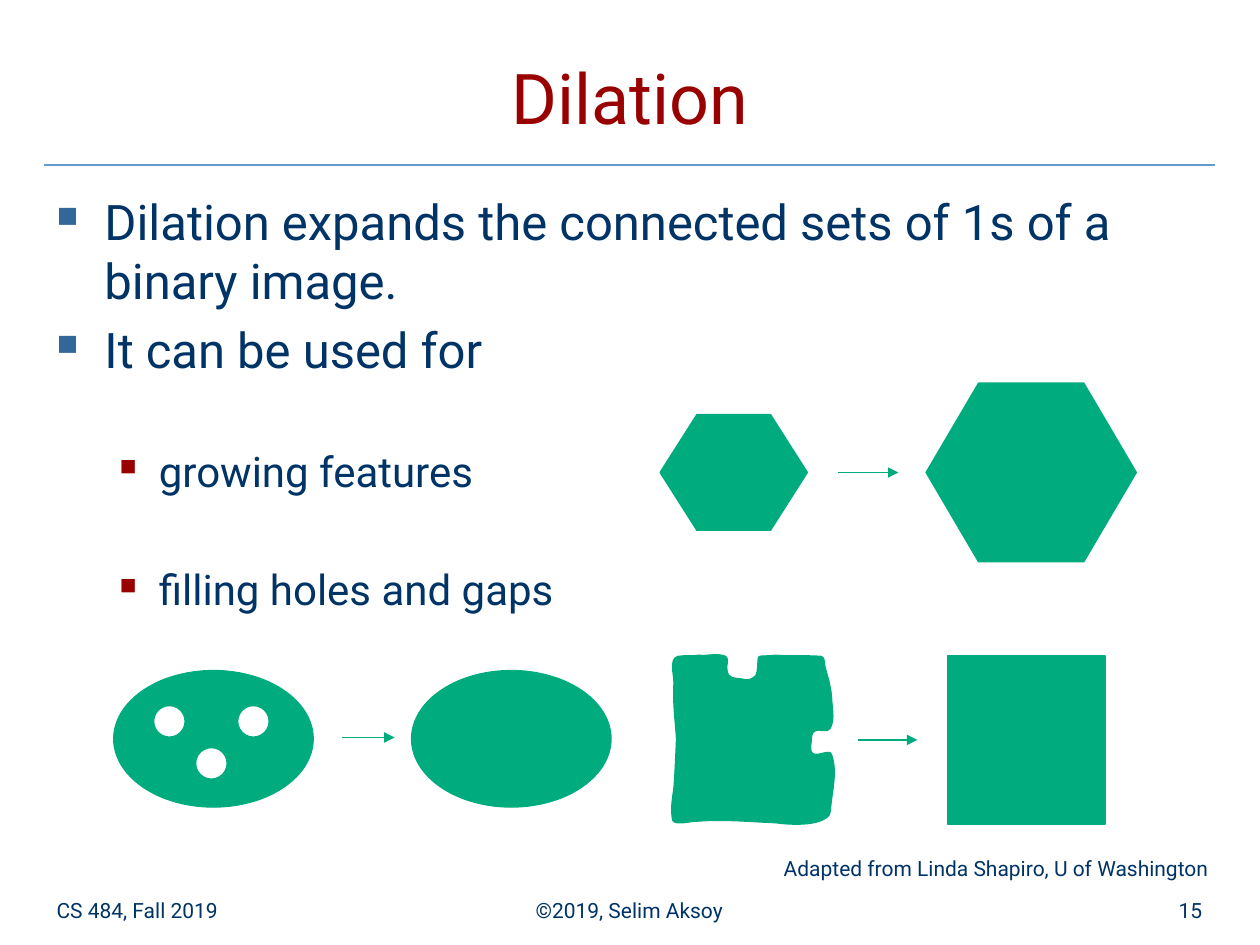
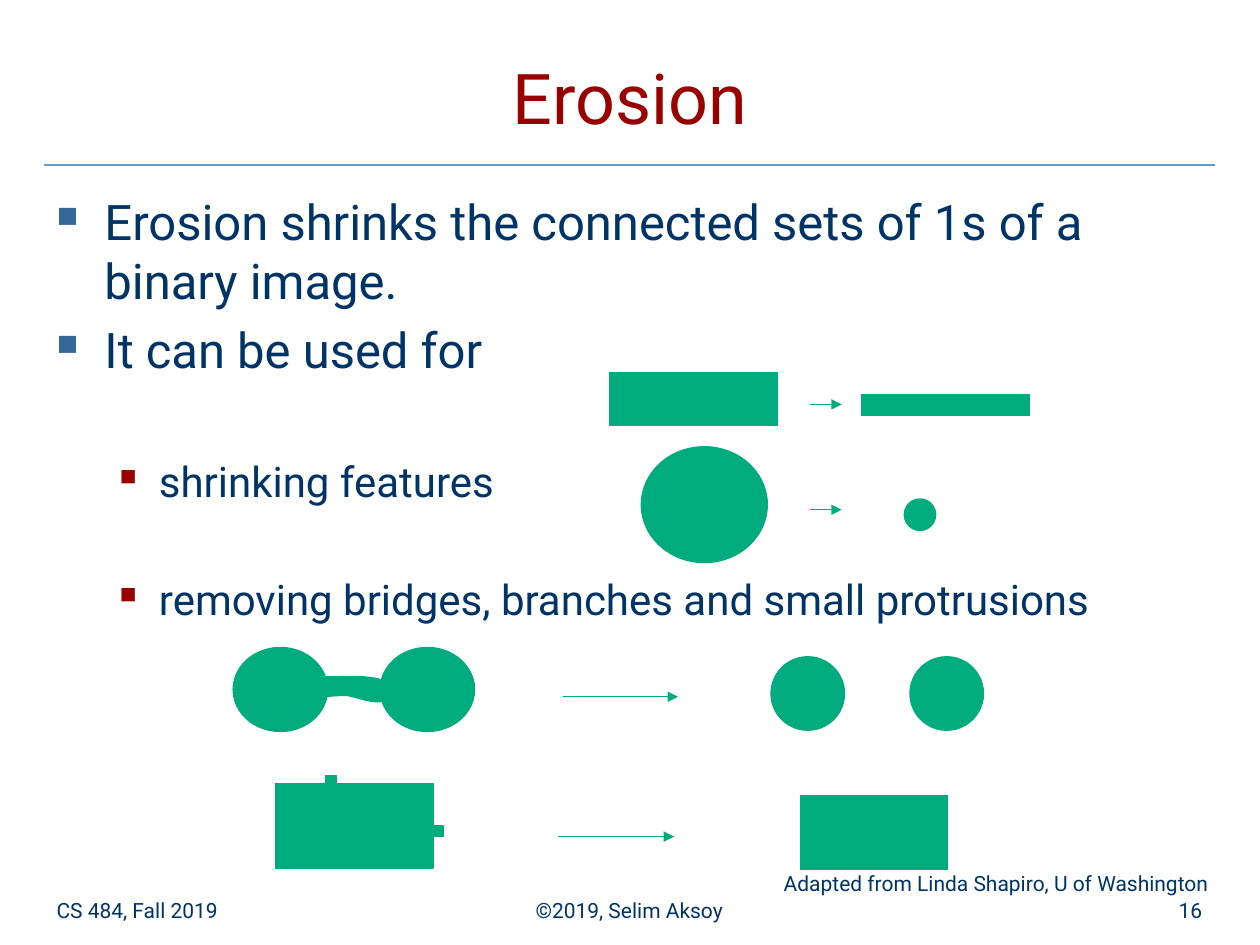
"""Builds two slides on morphological dilation and erosion."""
from lxml.etree import SubElement
from pptx import Presentation
from pptx.dml.color import RGBColor
from pptx.enum.shapes import MSO_CONNECTOR as Connector, MSO_SHAPE as Shape
from pptx.enum.text import MSO_ANCHOR as Anchor, PP_ALIGN as Align
from pptx.oxml.ns import qn
from pptx.util import Pt

color_of = RGBColor.from_string
FONT = "Roboto"
NAVY, RED, STEEL, SKY = "003366", "990000", "336699", "6699CC"
GREEN, WHITE = "00AB7E", "FFFFFF"
MARGIN, FULL = 25.2, 669
LINE_WIDTH = Pt(0.75)
CURVE_UNIT = Pt(0.72)
BULLETS = [
    {"size": 28, "indent": 27.4, "hang": 27.4, "color": STEEL, "percent": 60},
    {"size": 24, "indent": 58.5, "hang": 22.5, "color": RED, "percent": 55},
]


def write(frame, text, size=12, color=NAVY, align=Align.LEFT, before=0, level=None):
    """Add one formatted paragraph, bulleted when a level is given."""
    para = frame.add_paragraph() if frame.text else frame.paragraphs[0]
    para.alignment = align
    para.space_before = Pt(before)
    if level is not None:
        bullet = BULLETS[level]
        size = bullet["size"]
        para.level = level
        props = para._p.get_or_add_pPr()
        props.set("marL", str(Pt(bullet["indent"])))
        props.set("indent", str(-Pt(bullet["hang"])))
        tint = SubElement(props, qn("a:buClr"))
        SubElement(tint, qn("a:srgbClr"), val=bullet["color"])
        SubElement(props, qn("a:buSzPct"), val=str(bullet["percent"] * 1000))
        SubElement(props, qn("a:buFont"), typeface="Wingdings", pitchFamily="2", charset="2")
        SubElement(props, qn("a:buChar"), char="n")
    span = para.add_run()
    span.text = text
    span.font.name = FONT
    span.font.size = Pt(size)
    span.font.color.rgb = color_of(color)


def paint(shape, fill=GREEN):
    """Fill a figure and give it the green outline."""
    shape.shadow.inherit = False
    shape.fill.solid()
    shape.fill.fore_color.rgb = color_of(fill)
    shape.line.color.rgb = color_of(GREEN)
    shape.line.width = LINE_WIDTH


ragged_square = [
    (555, 520), (561, 521), (569, 518), (576, 521), (579, 523), (576, 528), (577, 532),
    (578, 539), (583, 538), (589, 539), (594, 540), (596, 540), (600, 536),
    (600, 535), (601, 534), (601, 533), (603, 517), (598, 522), (616, 520),
    (628, 521), (640, 520), (652, 521), (655, 522), (654, 527), (655, 530),
    (656, 535), (656, 535), (658, 541), (659, 545), (660, 552), (660, 552),
    (660, 561), (663, 570), (659, 578), (657, 582), (650, 578), (647, 580),
    (644, 581), (644, 586), (644, 586), (644, 590), (642, 596), (645, 598),
    (649, 601), (659, 594), (660, 599), (665, 613), (660, 629), (659, 644),
    (659, 645), (659, 646), (658, 647), (649, 658), (616, 653), (616, 653),
    (593, 652), (573, 650), (550, 652), (548, 652), (535, 655), (534, 651),
    (532, 642), (534, 633), (535, 625), (536, 612), (537, 586), (537, 586),
    (536, 572), (534, 557), (535, 542), (535, 535), (531, 523), (538, 521),
    (544, 520), (549, 521), (555, 520),
]
bridge = [
    (249, 537), (266, 538), (284, 535), (301, 539), (303, 539), (303, 546), (303, 546),
    (303, 549), (305, 553), (304, 556), (304, 557), (302, 557), (301, 557),
    (292, 557), (285, 554), (276, 552), (270, 552), (264, 552), (259, 553),
    (256, 553), (252, 555), (252, 555), (249, 547), (252, 557), (252, 547),
    (252, 544), (251, 540), (249, 537),
]

dilation = {
    "title": "Dilation",
    "number": "15",
    "credit_top": 485.3,
    "bullets": [
        ("Dilation expands the connected sets of 1s of a binary image.", 0, 0),
        ("It can be used for", 0, 6),
        ("growing features", 1, 38.3),
        ("filling holes and gaps", 1, 38.7),
    ],
    "figures": [
        (Shape.HEXAGON, 377.2, 236.9, 84.2, 66.2, GREEN, 0.318),
        (Shape.HEXAGON, 529.2, 218.9, 120.2, 102.2, GREEN, 0.294),
        (Shape.RECTANGLE, 541.4, 374.8, 90, 96, GREEN, None),
        (Shape.OVAL, 65, 383.2, 114, 78, GREEN, None),
        (Shape.OVAL, 235.2, 383.2, 114, 78, GREEN, None),
        (Shape.OVAL, 87.8, 403.2, 18, 18, WHITE, None),
        (Shape.OVAL, 135.8, 403.2, 18, 18, WHITE, None),
        (Shape.OVAL, 111.8, 427.2, 18, 18, WHITE, None),
    ],
    "outline": ragged_square,
    "arrows": [(478.8, 513.4, 270), (490.3, 524.2, 422.8), (195.5, 225.5, 421.4)],
}
erosion = {
    "title": "Erosion",
    "number": "16",
    "credit_top": 493.9,
    "bullets": [
        ("Erosion shrinks the connected sets of 1s of a binary image.", 0, 0),
        ("It can be used for", 0, 6),
        ("shrinking features", 1, 43.9),
        ("removing bridges, branches and small protrusions", 1, 38.7),
    ],
    "figures": [
        (Shape.RECTANGLE, 348.5, 213.1, 96, 30.2, GREEN, None),
        (Shape.RECTANGLE, 492.5, 225.4, 96, 12.2, GREEN, None),
        (Shape.OVAL, 366.5, 255.3, 72, 66.2, GREEN, None),
        (Shape.OVAL, 516.7, 285.1, 18, 18, GREEN, None),
        (Shape.OVAL, 133.2, 370, 54, 48, GREEN, None),
        (Shape.OVAL, 217.2, 370, 54, 48, GREEN, None),
        (Shape.OVAL, 440.6, 375.3, 42, 42, GREEN, None),
        (Shape.OVAL, 520, 375.3, 42, 42, GREEN, None),
        (Shape.RECTANGLE, 157.5, 447.8, 90, 48.2, GREEN, None),
        (Shape.RECTANGLE, 247.5, 472, 6, 6, GREEN, None),
        (Shape.RECTANGLE, 186.2, 443.2, 6, 6, GREEN, None),
        (Shape.RECTANGLE, 457.5, 454.7, 84, 42, GREEN, None),
    ],
    "outline": bridge,
    "arrows": [(463, 481, 231.1), (463, 481, 291.3), (321.8, 387.4, 398.2), (319, 385.2, 478.1)],
}

deck = Presentation()
deck.slide_width, deck.slide_height = Pt(720), Pt(540)

for topic in (dilation, erosion):
    page = deck.slides.add_slide(deck.slide_layouts[6])
    page.background.fill.solid()
    page.background.fill.fore_color.rgb = color_of(WHITE)

    title = {"size": 40, "color": RED, "align": Align.CENTER}
    texts = [
        (MARGIN, 505.4, 149.8, 25.2, Anchor.BOTTOM, [("CS 484, Fall 2019", {})]),
        (245.5, 505.4, 228.2, 25.2, Anchor.BOTTOM,
         [("©2019, Selim Aksoy", {"align": Align.CENTER})]),
        (544.3, 505.4, 149.8, 25.2, Anchor.BOTTOM, [(topic["number"], {"align": Align.RIGHT})]),
        (MARGIN, 15.1, FULL, 67.7, Anchor.BOTTOM, [(topic["title"], title)]),
        (MARGIN, 105.8, FULL, 391, Anchor.TOP,
         [(text, {"level": level, "before": before}) for text, level, before in topic["bullets"]]),
        (427.7, topic["credit_top"], 270, 21.6, Anchor.TOP,
         [("Adapted from Linda Shapiro, U of Washington", {"align": Align.RIGHT})]),
    ]
    for left, top, width, height, anchor, paras in texts:
        box = page.shapes.add_textbox(Pt(left), Pt(top), Pt(width), Pt(height))
        box.text_frame.word_wrap = True
        box.text_frame.vertical_anchor = anchor
        for text, style in paras:
            write(box.text_frame, text, **style)

    for kind, left, top, width, height, fill, corner in topic["figures"]:
        figure = page.shapes.add_shape(kind, Pt(left), Pt(top), Pt(width), Pt(height))
        if corner:
            figure.adjustments[0] = corner
        paint(figure, fill)

    knots = topic["outline"]
    builder = page.shapes.build_freeform(*knots[0], scale=CURVE_UNIT)
    builder.add_line_segments(knots[1:], close=True)
    outline = builder.convert_to_shape()
    paint(outline)
    segments = list(outline.element.iter(qn("a:lnTo")))
    for first in range(0, len(segments), 3):
        start, *others = segments[first:first + 3]
        start.tag = qn("a:cubicBezTo")
        for other in others:
            start.append(other[0])
            other.getparent().remove(other)

    lines = [(MARGIN, MARGIN + FULL, 94.3, SKY, False)]
    lines += [(*arrow, GREEN, True) for arrow in topic["arrows"]]
    for start, end, height, color, pointed in lines:
        line = page.shapes.add_connector(
            Connector.STRAIGHT, Pt(start), Pt(height), Pt(end), Pt(height))
        line.line.color.rgb = color_of(color)
        line.line.width = LINE_WIDTH
        props = line.element.spPr
        if pointed:
            SubElement(props.find(qn("a:ln")), qn("a:tailEnd"), type="triangle")
        SubElement(props, qn("a:effectLst"))

deck.save("out.pptx")
